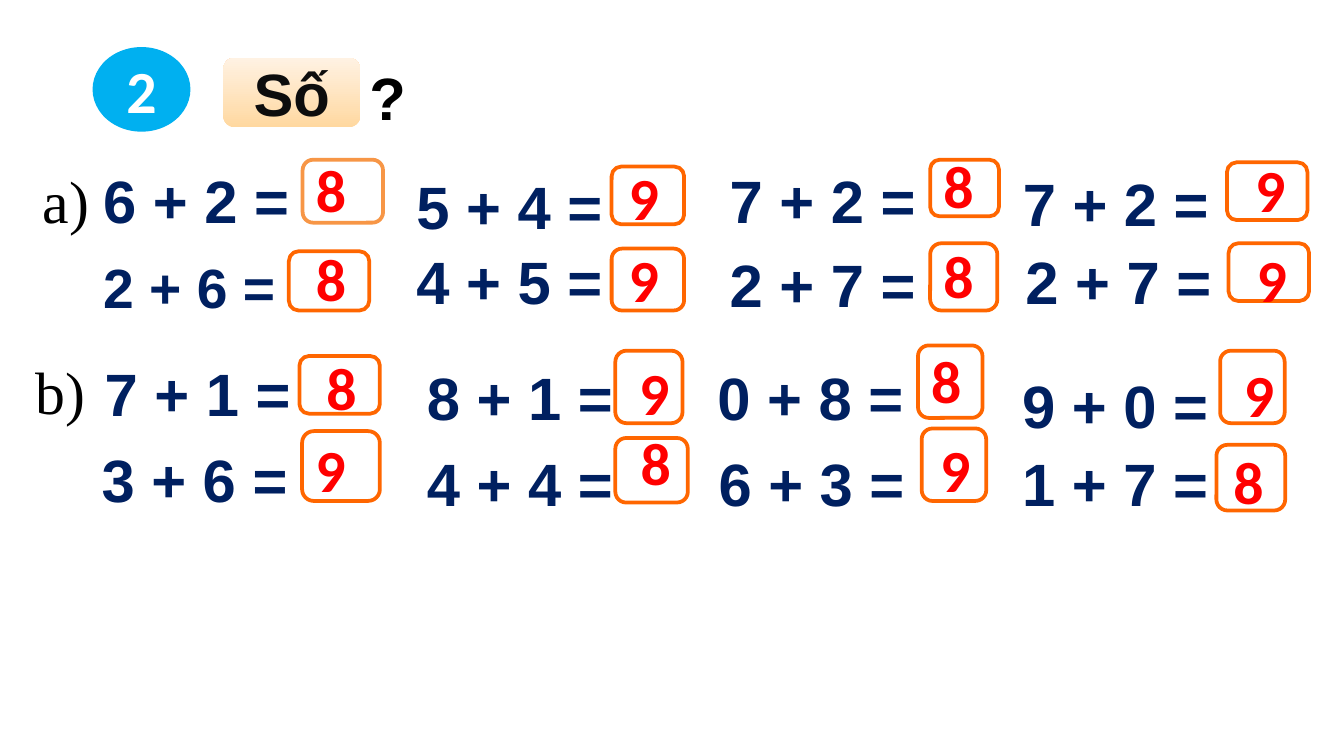
from pptx import Presentation
from pptx.dml.color import RGBColor
from pptx.enum.shapes import MSO_SHAPE
from pptx.enum.text import MSO_ANCHOR, PP_ALIGN
from pptx.util import Cm, Pt

COLORS = {
    "badge": "00B0F0", "white": "FFFFFF", "black": "000000",
    "title": "0D0D0D", "sum": "002060", "answer": "FF0000",
    "frame": "FF6600", "first_frame": "F79646",
    "tag_bottom": "FFD8A0", "tag_top": "FFF2E3",
}
SUM_W, SUM_H = 5.94, 1.52
LINE_H, DIGIT_W = 1.63, 0.89

# Each sum: text, (x, y), frame (x, y, w, h), answer, (x, y), in cm from the part's corner
PART_A = [
    ("6 + 2 =", (1.14, 0.05), (5.16, 0.05, 1.52, 1.19), "8", (5.16, -0.2)),
    ("2 + 6 =", (1.14, 1.68), (4.9, 1.78, 1.52, 1.12), "8", (5.16, 1.47)),
    ("5 + 4 =", (7.06, 0.15), (11, 0.18, 1.37, 1.09), "9", (11.07, -0.05)),
    ("4 + 5 =", (7.06, 1.57), (11, 1.73, 1.37, 1.17), "9", (11.07, 1.5)),
    ("7 + 2 =", (12.98, 0.05), (17.02, 0.05, 1.3, 1.07), "8", (17.02, -0.28)),
    ("2 + 7 =", (12.98, 1.63), (17.02, 1.63, 1.27, 1.27), "8", (17.02, 1.42)),
    ("7 + 2 =", (18.52, 0.1), (22.63, 0.1, 1.52, 1.09), "9", (22.91, -0.2)),
    ("2 + 7 =", (18.57, 1.57), (22.66, 1.63, 1.52, 1.09), "9", (22.94, 1.5)),
]
PART_B = [
    ("7 + 1 =", (1.3, 0.08), (5.23, 0.15, 1.52, 1.09), "8", (5.49, -0.08)),
    ("3 + 6 =", (1.24, 1.7), (5.28, 1.57, 1.47, 1.32), "9", (5.28, 1.47)),
    ("8 + 1 =", (7.39, 0.15), (11.2, 0.05, 1.27, 1.37), "9", (11.4, 0.03)),
    ("4 + 4 =", (7.39, 1.78), (11.2, 1.7, 1.37, 1.22), "8", (11.43, 1.35)),
    ("0 + 8 =", (12.88, 0.15), (16.92, -0.05, 1.22, 1.37), "8", (16.92, -0.2)),
    ("6 + 3 =", (12.9, 1.78), (16.99, 1.52, 1.22, 1.37), "9", (17.09, 1.47)),
    ("9 + 0 =", (18.64, 0.3), (22.63, 0.05, 1.22, 1.37), "9", (22.83, 0.05)),
    ("1 + 7 =", (18.64, 1.78), (22.56, 1.83, 1.3, 1.24), "8", (22.63, 1.7)),
]


def rgb(name):
    return RGBColor.from_string(COLORS[name])


def write(sp, text, font, color, size=32, bold=True,
          anchor=MSO_ANCHOR.TOP, align=PP_ALIGN.LEFT):
    tf = sp.text_frame
    tf.word_wrap = True
    tf.vertical_anchor = anchor
    p = tf.paragraphs[0]
    p.alignment = align
    r = p.add_run()
    r.text = text
    r.font.name = font
    r.font.size = Pt(size)
    r.font.bold = bold
    r.font.color.rgb = rgb(color)


def add_text(s, box, text, font, color, **style):
    sp = s.shapes.add_textbox(*map(Cm, box))
    write(sp, text, font, color, **style)


def add_box(s, kind, box, fill=None, line=None):
    sp = s.shapes.add_shape(kind, *map(Cm, box))
    sp.shadow.inherit = False
    if fill:
        sp.fill.solid()
        sp.fill.fore_color.rgb = rgb(fill)
    if line:
        sp.line.color.rgb = rgb(line)
        sp.line.width = Pt(2)
    else:
        sp.line.fill.background()
    return sp


def add_heading(s, left, top):
    centred = {"anchor": MSO_ANCHOR.MIDDLE, "align": PP_ALIGN.CENTER}
    # Exercise number
    badge = add_box(s, MSO_SHAPE.OVAL, (left, top, 1.85, 1.6), "badge")
    write(badge, "2", "Calibri", "white", **centred)
    # Heading tag, shaded from bottom to top
    tag = add_box(s, MSO_SHAPE.ROUNDED_RECTANGLE, (left + 2.47, top + 0.2, 2.59, 1.32))
    tag.fill.gradient()
    tag.fill.gradient_angle = 90
    for stop, name in zip(tag.fill.gradient_stops, ("tag_bottom", "tag_top")):
        stop.color.rgb = rgb(name)
    write(tag, "Số", "Arial", "title", **centred)
    add_text(s, (left + 4.98, top + 0.13, DIGIT_W, LINE_H), "?", "Arial", "black")


def add_sum(s, left, top, text, pos, frame, answer, answer_pos,
            width=SUM_W, size=32, line="frame"):
    add_text(s, (left + pos[0], top + pos[1], width, SUM_H), text, "Arial", "sum",
             size=size, anchor=MSO_ANCHOR.MIDDLE)
    x, y, w, h = frame
    add_box(s, MSO_SHAPE.ROUNDED_RECTANGLE, (left + x, top + y, w, h), "white", line)
    x, y = answer_pos
    add_text(s, (left + x, top + y, DIGIT_W, LINE_H), answer, "Calibri", "answer")


def add_part(s, left, top, label, sums, special=None):
    add_text(s, (left, top, 1.98, LINE_H), label, "Times New Roman", "black", bold=False)
    for i, item in enumerate(sums):
        add_sum(s, left, top, *item, **(special or {}).get(i, {}))


def main():
    prs = Presentation()
    prs.slide_width, prs.slide_height = Cm(25.4), Cm(14.29)
    s = prs.slides.add_slide(prs.slide_layouts[6])
    add_heading(s, 1.75, 0.89)
    add_part(s, 0.56, 2.97, "a)", PART_A, {
        0: {"width": 5.28, "line": "first_frame"},
        1: {"width": 4.83, "size": 29.6},
    })
    add_part(s, 0.43, 6.58, "b)", PART_B)
    prs.save("out.pptx")


if __name__ == "__main__":
    main()
